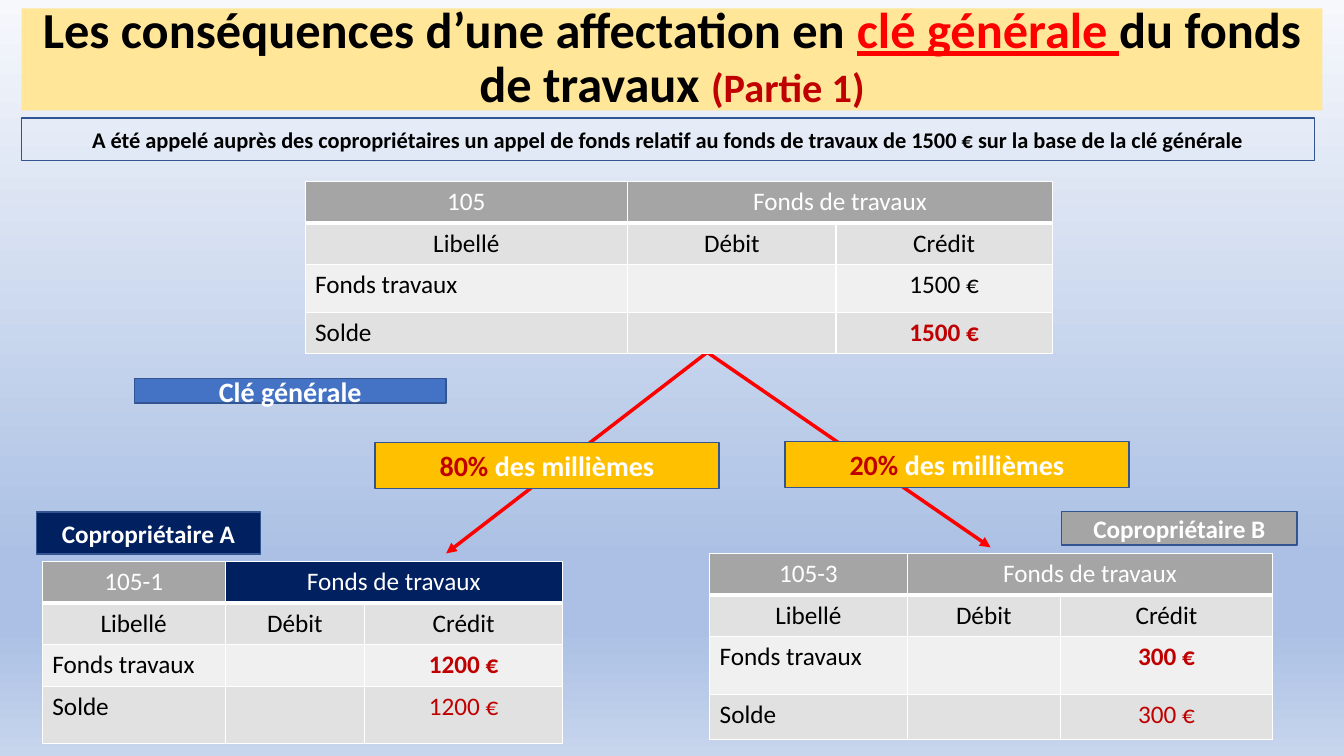
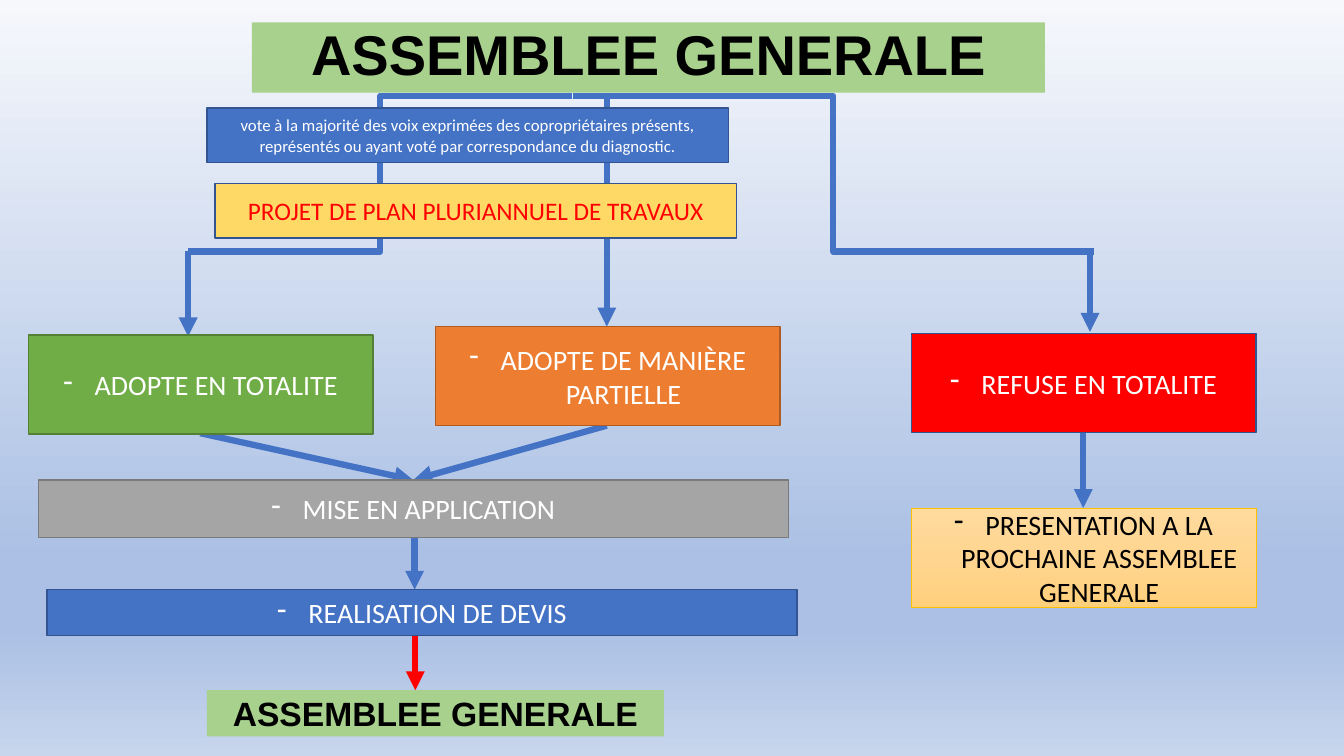
from lxml import etree
from pptx import Presentation, util as u
from pptx.dml.color import RGBColor
from pptx.enum import shapes, text
from pptx.oxml import ns

SLIDE_WIDTH, SLIDE_HEIGHT = u.Inches(13.33), u.Inches(7.5)
TITLE_ONLY = 5

BLACK = RGBColor(0x00, 0x00, 0x00)
WHITE = RGBColor(0xFF, 0xFF, 0xFF)
RED = RGBColor(0xFF, 0x00, 0x00)
DARK_RED = RGBColor(0xC0, 0x00, 0x00)
BLUE = RGBColor(0x44, 0x72, 0xC4)
BLUE_EDGE = RGBColor(0x32, 0x54, 0x91)
NAVY = RGBColor(0x00, 0x20, 0x60)
GRAY = RGBColor(0xA5, 0xA5, 0xA5)
GRAY_EDGE = RGBColor(0x7A, 0x7A, 0x7A)
ROW_GRAY = RGBColor(0xE1, 0xE1, 0xE1)
ROW_LIGHT = RGBColor(0xF0, 0xF0, 0xF0)
CREAM = RGBColor(0xFF, 0xE6, 0x99)
YELLOW = RGBColor(0xFF, 0xD9, 0x66)
AMBER = RGBColor(0xFF, 0xC0, 0x00)
ORANGE = RGBColor(0xED, 0x7D, 0x31)
ORANGE_EDGE = RGBColor(0xAF, 0x5C, 0x24)
GREEN = RGBColor(0x70, 0xAD, 0x47)
GREEN_EDGE = RGBColor(0x53, 0x80, 0x35)
PALE_GREEN = RGBColor(0xA9, 0xD1, 0x8E)
BACKGROUND_STOPS = [(0, RGBColor(0xF6, 0xF8, 0xFC)), (74, RGBColor(0xAB, 0xC0, 0xE4)),
                    (83, RGBColor(0xAB, 0xC0, 0xE4)), (100, RGBColor(0xC7, 0xD5, 0xED))]
PEACH_STOPS = [(0, RGBColor(0xFF, 0xDB, 0x9E)), (50, RGBColor(0xFF, 0xD5, 0x90)),
               (100, RGBColor(0xFF, 0xD0, 0x7C))]


def across(percent):
    return u.Emu(int(SLIDE_WIDTH * percent / 100))


def down(percent):
    return u.Emu(int(SLIDE_HEIGHT * percent / 100))


def place(left, top, width, height):
    """Turn shares of the slide, in percent, into lengths."""
    return across(left), down(top), across(width), down(height)


def add_xml(parent, tag, **attributes):
    return etree.SubElement(parent, ns.qn(tag), attributes)


def fill_gradient(fill, element, stops):
    """Give a top-to-bottom gradient to the fill that lies in element."""
    fill.gradient()
    fill.gradient_angle = 270
    stop_list = element.xpath(".//a:gsLst")[0]
    for stop in list(stop_list):
        stop_list.remove(stop)
    for percent, color in stops:
        stop = add_xml(stop_list, "a:gs", pos=str(percent * 1000))
        add_xml(stop, "a:srgbClr", val=str(color))


def format_run(run, size, color, bold=False, font="Calibri", underline=None):
    run.font.name = font
    run.font.size = u.Pt(size)
    run.font.color.rgb = color
    run.font.bold = bold
    run.font.underline = underline


def write(paragraph, content, size, color, bold=False, font="Calibri",
          align=text.PP_ALIGN.CENTER):
    """Write one string, or (string, changes to the format) pairs."""
    pieces = [(content, {})] if isinstance(content, str) else content
    paragraph.alignment = align
    for wording, changes in pieces:
        run = paragraph.add_run()
        run.text = wording
        style = dict(size=size, color=color, bold=bold, font=font)
        format_run(run, **{**style, **changes})


def set_title(slide, position, fill_color, content, size, font="Calibri"):
    title = slide.shapes.title
    title.left, title.top, title.width, title.height = position
    title.fill.solid()
    title.fill.fore_color.rgb = fill_color
    frame = title.text_frame
    frame.auto_size = text.MSO_AUTO_SIZE.NONE
    frame.vertical_anchor = text.MSO_ANCHOR.MIDDLE
    frame.paragraphs[0].line_spacing = 0.9
    write(frame.paragraphs[0], content, size, BLACK, True, font)


def add_box(slide, position, content, fill=None, edge=BLUE_EDGE, edge_width=1,
            size=20, color=WHITE, bold=False, font="Calibri"):
    """Add a rectangle; fill is a colour, gradient stops or None."""
    box = slide.shapes.add_shape(shapes.MSO_SHAPE.RECTANGLE, *position)
    box.shadow.inherit = False
    if fill is None:
        box.fill.background()
    elif isinstance(fill, list):
        fill_gradient(box.fill, box.element, fill)
    else:
        box.fill.solid()
        box.fill.fore_color.rgb = fill
    if edge is None:
        box.line.fill.background()
    else:
        box.line.color.rgb = edge
        box.line.width = u.Pt(edge_width)
    frame = box.text_frame
    frame.word_wrap = True
    frame.vertical_anchor = text.MSO_ANCHOR.MIDDLE
    write(frame.paragraphs[0], content, size, color, bold, font)
    return box


def add_step(slide, position, content, fill, edge, **style):
    """Add a box whose text is a dash item."""
    box = add_box(slide, position, content, fill, edge, **style)
    indent = u.Inches(0.31)
    properties = box.text_frame.paragraphs[0]._p.get_or_add_pPr()
    properties.set("marL", str(indent))
    properties.set("indent", str(-indent))
    add_xml(properties, "a:buFontTx")
    add_xml(properties, "a:buChar", char="-")


def add_line(slide, start, end, color=BLUE, width=4.5, bent=False):
    """Add a straight arrow, or a bent line without a head."""
    kind = shapes.MSO_CONNECTOR.ELBOW if bent else shapes.MSO_CONNECTOR.STRAIGHT
    line = slide.shapes.add_connector(kind, across(start[0]), down(start[1]),
                                      across(end[0]), down(end[1]))
    line.line.color.rgb = color
    line.line.width = u.Pt(width)
    if not bent:
        add_xml(line.element.xpath(".//a:ln")[0], "a:tailEnd", type="triangle")
    add_xml(line.element.spPr, "a:effectLst")


def add_borders(cell, bottom_width):
    properties = cell._tc.get_or_add_tcPr()
    widths = {"a:lnL": 1, "a:lnR": 1, "a:lnT": 1, "a:lnB": bottom_width}
    for index, (tag, width) in enumerate(widths.items()):
        border = add_xml(properties, tag, w=str(u.Pt(width)))
        add_xml(add_xml(border, "a:solidFill"), "a:srgbClr", val=str(WHITE))
        properties.insert(index, border)


def add_account(slide, left, top, columns, rows, number, amount,
                header_fill=GRAY, amount_style=None, balance_style=None):
    """Add a ledger table: account header, column names, entry, balance."""
    frame = slide.shapes.add_table(len(rows), len(columns),
                                   *place(left, top, sum(columns), sum(rows)))
    table = frame.table
    for column, share in zip(table.columns, columns):
        column.width = across(share)
    for row, share in zip(table.rows, rows):
        row.height = down(share)
    wording = [[number, "Fonds de travaux", ""], ["Libellé", "Débit", "Crédit"],
               ["Fonds travaux", "", amount], ["Solde", "", amount]]
    row_fills = [header_fill, ROW_GRAY, ROW_LIGHT, ROW_GRAY]
    credit_styles = {2: amount_style or {}, 3: balance_style or {}}
    for r, line in enumerate(wording):
        for c, content in enumerate(line):
            cell = table.cell(r, c)
            cell.fill.solid()
            cell.fill.fore_color.rgb = GRAY if (r, c) == (0, 0) else row_fills[r]
            add_borders(cell, 3 if r == 0 else 1)
            if not content:
                continue
            style = dict(size=18, color=WHITE if r == 0 else BLACK)
            if c == 2:
                style.update(credit_styles.get(r, {}))
            if r > 1 and c == 0:
                style["align"] = text.PP_ALIGN.LEFT
            write(cell.text_frame.paragraphs[0], content, **style)
    table.cell(0, 1).merge(table.cell(0, 2))


def build_fund_slide(slide):
    set_title(slide, place(1.6, 1.1, 96.8, 13.5), CREAM, [
        ("Les conséquences d’une affectation en ", {}),
        ("clé générale ", dict(color=RED, underline=True)),
        ("du fonds de travaux ", {}),
        ("(Partie 1)", dict(color=DARK_RED, size=28.8))], 36)
    add_line(slide, (52.7, 46.5), (33.2, 73.2), RED, 2.5)
    add_line(slide, (52.7, 46.7), (73.7, 72.4), RED, 2.5)

    strong = dict(color=DARK_RED, bold=True)
    plain = dict(color=DARK_RED)
    add_account(slide, 22.7, 24, [24, 15.5, 16.1], [5.5, 5.5, 6.3, 5.5],
                "105", "1500 €", balance_style=strong)
    add_account(slide, 3.15, 74.3, [13.6, 10.4, 14.7], [5.5, 5.5, 5.5, 7.6],
                "105-1", "1200 €", NAVY, strong, plain)
    add_account(slide, 52.8, 73.2, [14.7, 11.4, 15.8], [5.5, 5.5, 7.7, 5.9],
                "105-3", "300 €", GRAY, strong, plain)

    add_box(slide, place(10, 50.1, 23.2, 3.2), "Clé générale", BLUE, bold=True)
    for left, top, share in [(27.9, 58.5, "80%"), (58.4, 58.4, "20%")]:
        add_box(slide, place(left, top, 25.6, 6.1),
                [(share, plain), (" des millièmes", {})], AMBER, bold=True)
    add_box(slide, place(79, 67.7, 17.5, 4.4), "Copropriétaire B", GRAY,
            size=18, bold=True)
    add_box(slide, place(2.7, 67.7, 16.7, 5.6), "Copropriétaire A", NAVY,
            size=18, bold=True)
    add_box(slide, place(1.6, 15.6, 96.2, 5.6),
            "A été appelé auprès des copropriétaires un appel de fonds relatif au "
            "fonds de travaux de 1500 € sur la base de la clé générale",
            size=16, color=BLACK, bold=True)


def build_assembly_slide(slide):
    assembly = "ASSEMBLEE GENERALE"
    set_title(slide, place(18.75, 2.95, 59, 9.3), PALE_GREEN, assembly, 40, "Arial")

    for end in [(14, 33.3), (81.4, 33.3)]:
        add_line(slide, (42.6, 12.7), end, bent=True)
    arrows = [((45.15, 12.3), (45.15, 43.2)), ((14, 33.2), (14, 44.5)),
              ((81.1, 33.7), (81.1, 43.9)), ((30.85, 66.3), (30.85, 78)),
              ((14.9, 57.3), (30.75, 63.5)), ((45.15, 56.3), (30.75, 63.5)),
              ((80.6, 57.1), (80.6, 67.2))]
    for start, end in arrows:
        add_line(slide, start, end)
    add_line(slide, (30.9, 84.1), (30.9, 91.3), RED)

    outcome = (25.65, 13.1)
    add_step(slide, place(2.1, 44.3, *outcome), "ADOPTE EN TOTALITE", GREEN, GREEN_EDGE)
    add_step(slide, place(32.4, 43.2, *outcome), "ADOPTE DE MANIÈRE PARTIELLE",
             ORANGE, ORANGE_EDGE)
    add_step(slide, place(67.8, 44.1, *outcome), "REFUSE EN TOTALITE", RED, BLUE_EDGE)
    add_step(slide, place(67.8, 67.2, *outcome),
             "PRESENTATION A LA PROCHAINE ASSEMBLEE GENERALE", PEACH_STOPS, AMBER,
             edge_width=0.5, color=BLACK)
    add_step(slide, place(2.85, 63.5, 55.8, 7.6), "MISE EN APPLICATION", GRAY, GRAY_EDGE)
    add_step(slide, place(3.5, 78, 55.8, 6.1), "REALISATION DE DEVIS", BLUE, BLUE_EDGE)

    add_box(slide, place(15.4, 14.3, 38.8, 7.2),
            "vote à la majorité des voix exprimées des copropriétaires présents, "
            "représentés ou ayant voté par correspondance du diagnostic.",
            BLUE, size=12)
    add_box(slide, place(16, 24.3, 38.8, 7.2), "PROJET DE PLAN PLURIANNUEL DE TRAVAUX",
            YELLOW, size=18, color=RED)
    add_box(slide, place(15.4, 91.3, 34, 6.1), assembly, PALE_GREEN, None,
            size=24, color=BLACK, bold=True, font="Arial")


def main():
    presentation = Presentation()
    presentation.slide_width, presentation.slide_height = SLIDE_WIDTH, SLIDE_HEIGHT
    master = presentation.slide_master
    fill_gradient(master.background.fill, master.element, BACKGROUND_STOPS)
    for build in (build_fund_slide, build_assembly_slide):
        build(presentation.slides.add_slide(presentation.slide_layouts[TITLE_ONLY]))
    presentation.save("out.pptx")


if __name__ == "__main__":
    main()
